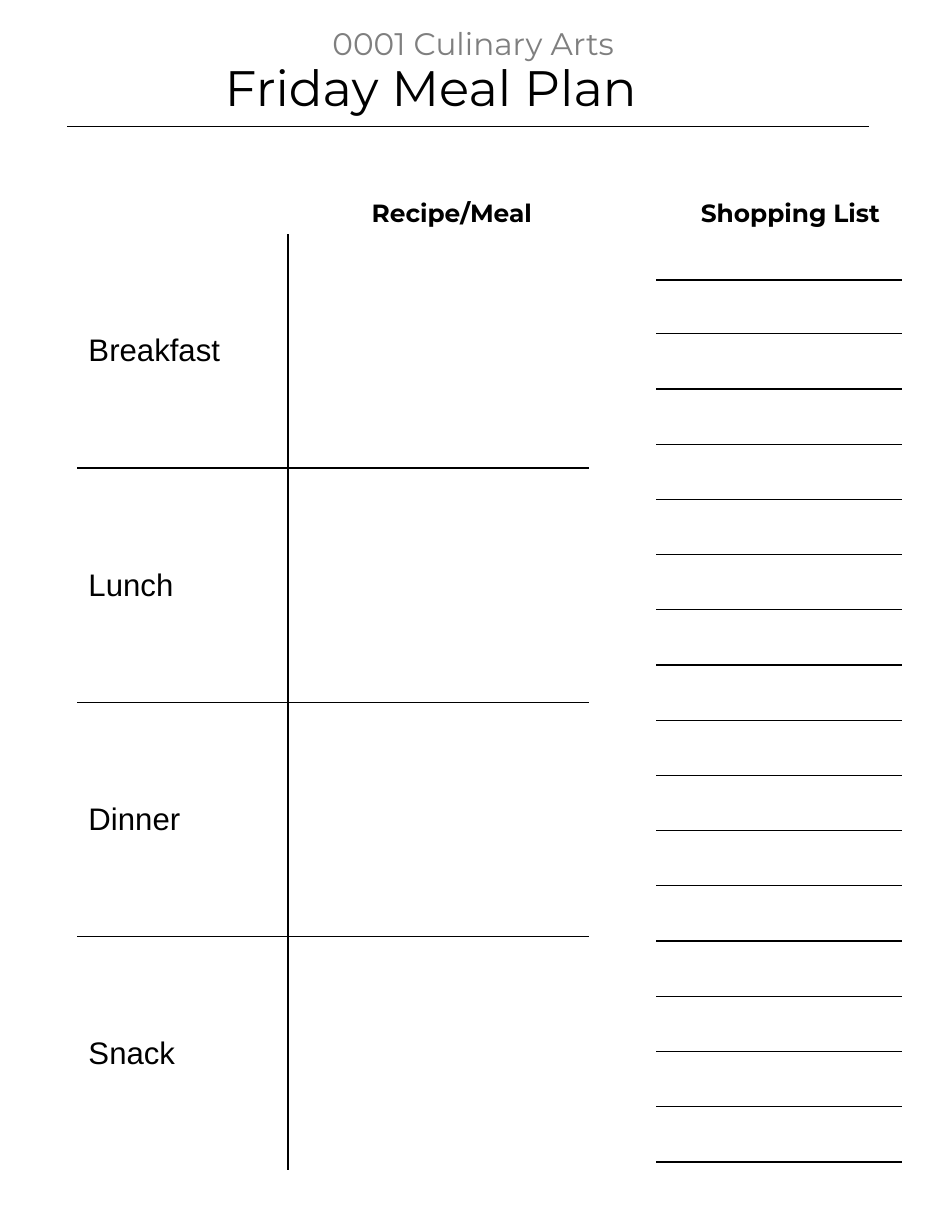
from lxml import etree
from pptx import Presentation
from pptx.dml.color import RGBColor
from pptx.enum import shapes, text
from pptx.oxml.ns import qn
from pptx.util import Inches, Pt

BLACK = RGBColor(0x00, 0x00, 0x00)
GRAY = RGBColor(0x7F, 0x7F, 0x7F)

MEALS = ["Breakfast", "Lunch", "Dinner", "Snack"]
SHOPPING_ROWS = 16


class MealPlanner:
    """Holds the page style and the slide being filled."""

    heading_font = "Montserrat"
    body_font = "Arial"
    rule_width = Pt(0.75)
    border_width = Pt(1)

    def __init__(self, slide):
        self.slide = slide

    def style_run(self, paragraph, wording, color=BLACK, **font_values):
        run = paragraph.add_run()
        run.text = wording
        for attribute, value in font_values.items():
            setattr(run.font, attribute, value)
        run.font.color.rgb = color

    def heading(self, wording, left, top, width, height, size, color=BLACK, bold=False):
        box = self.slide.shapes.add_textbox(
            Inches(left), Inches(top), Inches(width), Inches(height))
        frame = box.text_frame
        frame.word_wrap = True
        frame.auto_size = text.MSO_AUTO_SIZE.SHAPE_TO_FIT_TEXT
        self.style_run(frame.paragraphs[0], wording, color,
                       name=self.heading_font, size=Pt(size), bold=bold)

    def rule(self, left, right, y):
        line = self.slide.shapes.add_connector(
            shapes.MSO_CONNECTOR.STRAIGHT,
            Inches(left), Inches(y), Inches(right), Inches(y))
        line.line.color.rgb = BLACK
        line.line.width = self.rule_width
        etree.SubElement(line._element.spPr, qn("a:effectLst"))

    def borders(self, cell, sides):
        """Draw the named sides (of L, R, T, B) and clear the others."""
        properties = cell._tc.get_or_add_tcPr()
        for position, side in enumerate("LRTB"):
            edge = etree.Element(qn(f"a:ln{side}"), w=str(self.border_width))
            if side in sides:
                fill = etree.SubElement(edge, qn("a:solidFill"))
                etree.SubElement(fill, qn("a:srgbClr"), val=str(BLACK))
            else:
                etree.SubElement(edge, qn("a:noFill"))
            properties.insert(position, edge)

    def grid(self, left, top, column_widths, row_heights, sides_of):
        """Add a clear table; sides_of(row, column) names each cell's borders."""
        table = self.slide.shapes.add_table(
            len(row_heights), len(column_widths), Inches(left), Inches(top),
            Inches(sum(column_widths)), Inches(sum(row_heights))).table
        table.first_row = table.horz_banding = False
        for column, width in zip(table.columns, column_widths):
            column.width = Inches(width)
        for r, height in enumerate(row_heights):
            table.rows[r].height = Inches(height)
            for c in range(len(column_widths)):
                cell = table.cell(r, c)
                cell.fill.background()
                self.borders(cell, sides_of(r, c))
        return table

    def meal_table(self, meals):
        def inner_sides(row, column):
            return (("R" if column == 0 else "L")
                    + ("T" if row > 0 else "")
                    + ("B" if row < len(meals) - 1 else ""))

        table = self.grid(0.69, 2.09, [1.88, 2.69], [2.09] * len(meals), inner_sides)
        for row, meal in enumerate(meals):
            cell = table.cell(row, 0)
            cell.vertical_anchor = text.MSO_ANCHOR.MIDDLE
            self.style_run(cell.text_frame.paragraphs[0], meal,
                           name=self.body_font, size=Pt(20))

    def shopping_lines(self, count):
        self.grid(5.86, 2.5, [2.19], [0.48] + [0.493] * (count - 1),
                  lambda row, column: "TB")


def main():
    presentation = Presentation()
    presentation.slide_width = Inches(8.5)
    presentation.slide_height = Inches(11)
    page = MealPlanner(presentation.slides.add_slide(presentation.slide_layouts[6]))

    page.rule(0.6, 7.76, 1.13)
    page.heading("0001 Culinary Arts", 2.87, 0.17, 2.76, 0.44, 20, GRAY)
    page.heading("Friday Meal Plan", 1.91, 0.46, 4.68, 0.64, 32)
    page.meal_table(MEALS)
    for title, left in [("Recipe/Meal", 3.22), ("Shopping List", 6.16)]:
        page.heading(title, left, 1.72, 1.9, 0.37, 16, bold=True)
    page.shopping_lines(SHOPPING_ROWS)

    presentation.save("out.pptx")


if __name__ == "__main__":
    main()
